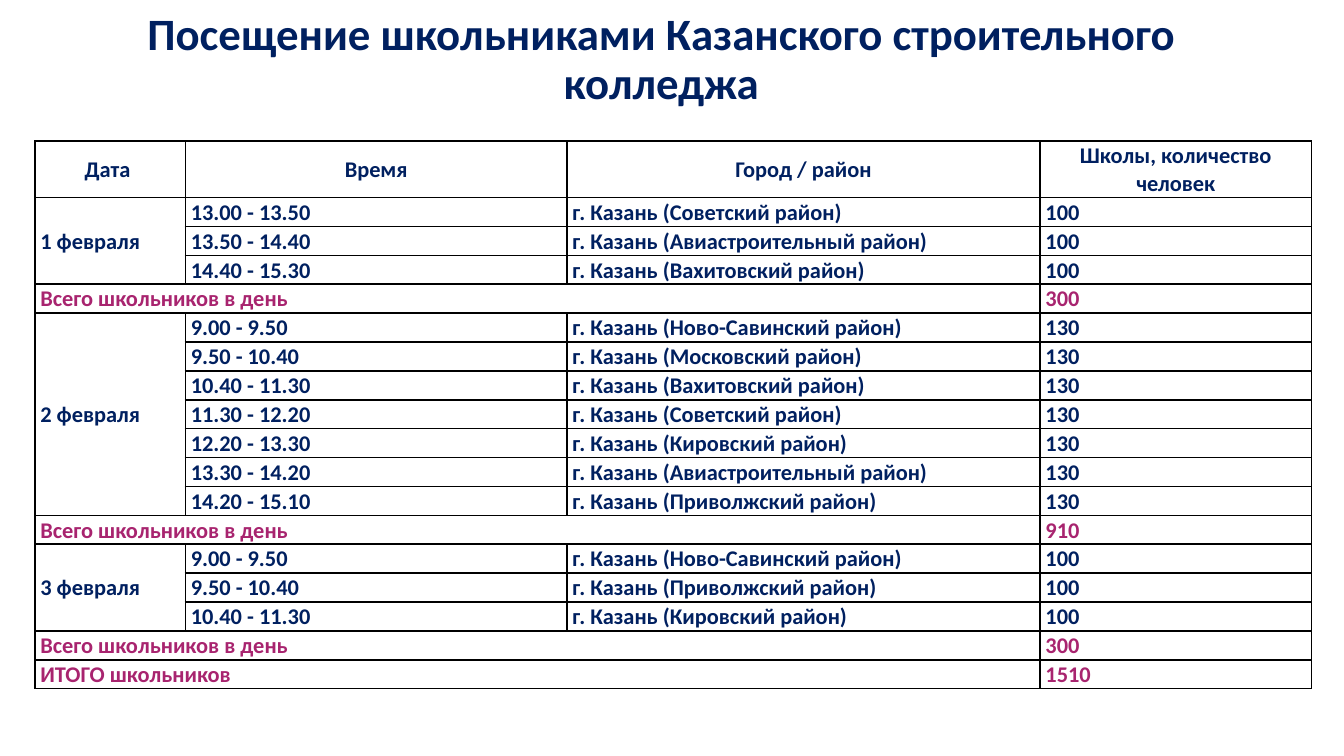
import pptx
import pptx.dml.color
import pptx.enum.text
import pptx.oxml
import pptx.oxml.ns
import pptx.util

COLORS = {"navy": "002060", "total": "A8246F", "border": "000000", "paper": "FFFFFF"}
FONT = "Calibri"
Inches, Pt = pptx.util.Inches, pptx.util.Pt
ALIGN = pptx.enum.text.PP_ALIGN
MIDDLE = pptx.enum.text.MSO_ANCHOR.MIDDLE

HEADERS = ["Дата ", "Время", "Город / район", "Школы, количество человек"]
COLUMN_WIDTHS = [1.12, 2.84, 3.52, 2.02]
TABLE_HEIGHT, HEADER_HEIGHT = 4.08, 0.42

# Date, pupils per visit, visits as (time, district)
DAYS = [
    ("1 февраля", 100, [
        ("13.00 - 13.50", "Советский"),
        ("13.50 - 14.40", "Авиастроительный"),
        ("14.40 - 15.30", "Вахитовский"),
    ]),
    ("2 февраля", 130, [
        ("9.00 - 9.50", "Ново-Савинский"),
        ("9.50 - 10.40", "Московский"),
        ("10.40 - 11.30", "Вахитовский"),
        ("11.30 - 12.20", "Советский"),
        ("12.20 - 13.30", "Кировский"),
        ("13.30 - 14.20", "Авиастроительный"),
        ("14.20 - 15.10", "Приволжский"),
    ]),
    ("3 февраля", 100, [
        ("9.00 - 9.50", "Ново-Савинский"),
        ("9.50 - 10.40", "Приволжский"),
        ("10.40 - 11.30", "Кировский"),
    ]),
]


def add_run(para, text, size, color):
    span = para.add_run()
    span.text = text
    span.font.name = FONT
    span.font.size = Pt(size)
    span.font.bold = True
    span.font.color.rgb = pptx.dml.color.RGBColor.from_string(COLORS[color])


def add_borders(cell):
    properties = cell._tc.get_or_add_tcPr()
    for side in ("lnL", "lnR", "lnT", "lnB"):
        properties.append(pptx.oxml.parse_xml(
            f'<a:{side} {pptx.oxml.ns.nsdecls("a")} w="{Pt(1)}"><a:solidFill>'
            f'<a:srgbClr val="{COLORS["border"]}"/></a:solidFill></a:{side}>'))


# Widescreen slide, 16 to 9
deck = pptx.Presentation()
deck.slide_width = Inches(10)
deck.slide_height = deck.slide_width * 9 // 16
page = deck.slides.add_slide(deck.slide_layouts[5])

# Title
title = page.shapes.title
title.left, title.top = Inches(0.42), Inches(0.14)
title.width, title.height = Inches(9), Inches(0.62)
frame = title.text_frame
frame.word_wrap = True
frame.auto_size = pptx.enum.text.MSO_AUTO_SIZE.NONE
frame.vertical_anchor = MIDDLE
frame.margin_left = frame.margin_right = Inches(0.07)
frame.margin_top = frame.margin_bottom = Inches(0.04)
para = frame.paragraphs[0]
para.alignment = ALIGN.CENTER
para.line_spacing = 0.9
add_run(para, "Посещение школьниками Казанского строительного колледжа", 24, "navy")

# Rows of the schedule, with the cells to merge
rows = [(HEADERS, "navy")]
merges = []
grand_total = 0
for date, pupils, visits in DAYS:
    first = len(rows)
    for time, district in visits:
        label = date if len(rows) == first else ""
        rows.append(([label, time, f"г. Казань ({district} район)", str(pupils)], "navy"))
    merges.append((first, 0, len(rows) - 1, 0))
    day_total = pupils * len(visits)
    grand_total += day_total
    merges.append((len(rows), 0, len(rows), 2))
    rows.append((["Всего школьников в день", "", "", str(day_total)], "total"))
merges.append((len(rows), 0, len(rows), 2))
rows.append((["ИТОГО школьников ", "", "", str(grand_total)], "total"))

# Schedule table
row_height = (TABLE_HEIGHT - HEADER_HEIGHT) / (len(rows) - 1)
table = page.shapes.add_table(
    len(rows), len(HEADERS), Inches(0.26), Inches(1.05),
    Inches(sum(COLUMN_WIDTHS)), Inches(TABLE_HEIGHT)).table
table.first_row = table.horz_banding = False
for column, width in zip(table.columns, COLUMN_WIDTHS):
    column.width = Inches(width)

for row_index, (texts, color) in enumerate(rows):
    table.rows[row_index].height = Inches(row_height if row_index else HEADER_HEIGHT)
    for column_index, text in enumerate(texts):
        cell = table.cell(row_index, column_index)
        add_borders(cell)
        cell.fill.solid()
        cell.fill.fore_color.rgb = pptx.dml.color.RGBColor.from_string(COLORS["paper"])
        cell.vertical_anchor = MIDDLE
        cell.margin_left = cell.margin_right = Inches(0.04)
        cell.margin_top, cell.margin_bottom = Inches(0.01), 0
        para = cell.text_frame.paragraphs[0]
        para.alignment = ALIGN.LEFT if row_index else ALIGN.CENTER
        para.font.size = Pt(12)
        if text:
            add_run(para, text, 12, color)

for top, left, bottom, right in merges:
    table.cell(top, left).merge(table.cell(bottom, right))

deck.save("out.pptx")
